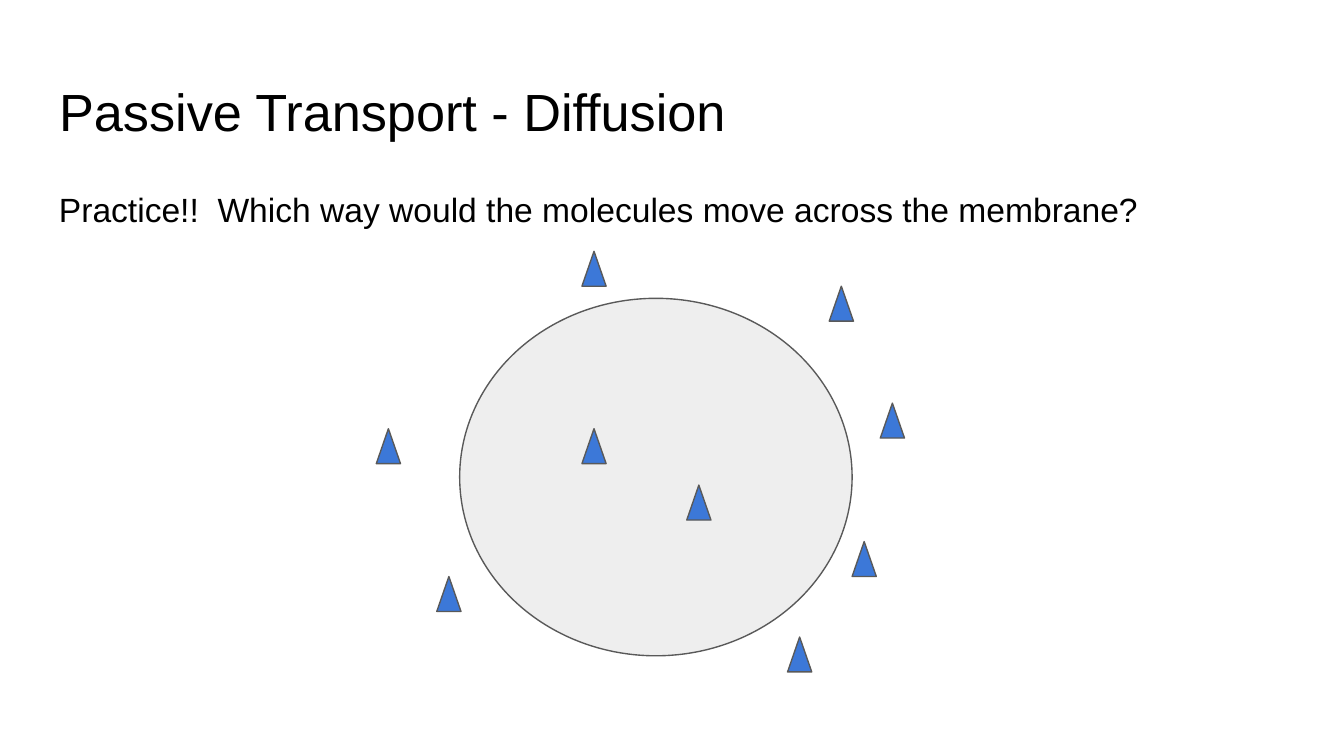
from dataclasses import dataclass

from pptx import Presentation
from pptx.dml.color import RGBColor
from pptx.enum.shapes import MSO_SHAPE
from pptx.enum.text import MSO_ANCHOR, MSO_AUTO_SIZE, PP_ALIGN
from pptx.util import Inches, Pt

CELL = MSO_SHAPE.OVAL
MOLECULE = MSO_SHAPE.FLOWCHART_EXTRACT
TOP = MSO_ANCHOR.TOP
NO_AUTOFIT = MSO_AUTO_SIZE.NONE
LEFT = PP_ALIGN.LEFT
TITLE_ONLY = 5


@dataclass(frozen=True)
class Theme:
    """Colours, font and type sizes of the slide."""
    font: str = "Arial"
    text: RGBColor = RGBColor(0x00, 0x00, 0x00)
    cell: RGBColor = RGBColor(0xEE, 0xEE, 0xEE)
    molecule: RGBColor = RGBColor(0x3C, 0x78, 0xD8)
    outline: RGBColor = RGBColor(0x59, 0x59, 0x59)
    outline_width: float = 0.75
    title_size: int = 28
    body_size: int = 18


THEME = Theme()


def place(shape, box):
    """Move and size a shape to a box given in inches."""
    shape.left, shape.top, shape.width, shape.height = map(Inches, box)


def write(shape, text, size, line_spacing):
    """Fill a text shape with one left-aligned paragraph."""
    frame = shape.text_frame
    frame.word_wrap = True
    frame.auto_size = NO_AUTOFIT
    frame.vertical_anchor = TOP
    frame.margin_left = frame.margin_right = Inches(0.1)
    frame.margin_top = frame.margin_bottom = Inches(0.1)
    para = frame.paragraphs[0]
    para.text = text
    para.alignment = LEFT
    para.line_spacing = line_spacing
    para.font.name = THEME.font
    para.font.size = Pt(size)
    para.font.color.rgb = THEME.text


def add_title(page, box, text):
    """Format the title placeholder."""
    place(page.shapes.title, box)
    write(page.shapes.title, text, THEME.title_size, 1.0)


def add_question(page, box, text):
    """Add the practice question below the title."""
    question = page.shapes.add_textbox(*map(Inches, box))
    write(question, text, THEME.body_size, 1.15)


def add_outlined(page, kind, box, fill):
    """Add a filled preset shape with a thin outline."""
    shape = page.shapes.add_shape(kind, *map(Inches, box))
    shape.shadow.inherit = False
    shape.fill.solid()
    shape.fill.fore_color.rgb = fill
    shape.line.color.rgb = THEME.outline
    shape.line.width = Pt(THEME.outline_width)


def add_cell_diagram(page, box, molecules):
    """Draw the cell in its box and molecules at offsets from its corner."""
    left, top = box[:2]
    add_outlined(page, CELL, box, THEME.cell)
    for dx, dy in molecules:
        add_outlined(page, MOLECULE, (left + dx, top + dy, 0.18, 0.26), THEME.molecule)


def main():
    """Build and save the slide."""
    deck = Presentation()
    deck.slide_width = Inches(10)
    deck.slide_height = deck.slide_width * 9 // 16
    page = deck.slides.add_slide(deck.slide_layouts[TITLE_ONLY])
    add_title(page, (0.34, 0.49, 9.32, 0.63), "Passive Transport - Diffusion")
    add_question(
        page,
        (0.34, 1.26, 9.32, 3.74),
        "Practice!!  Which way would the molecules move across the membrane?",
    )
    outside = [
        (0.91, -0.35), (-0.62, 0.97), (3.13, 0.78), (-0.17, 2.07),
        (2.75, -0.09), (2.44, 2.52), (2.92, 1.81),
    ]
    inside = [(0.91, 0.97), (1.69, 1.39)]
    add_cell_diagram(page, (3.42, 2.22, 2.92, 2.66), outside + inside)
    deck.save("out.pptx")


if __name__ == "__main__":
    main()
